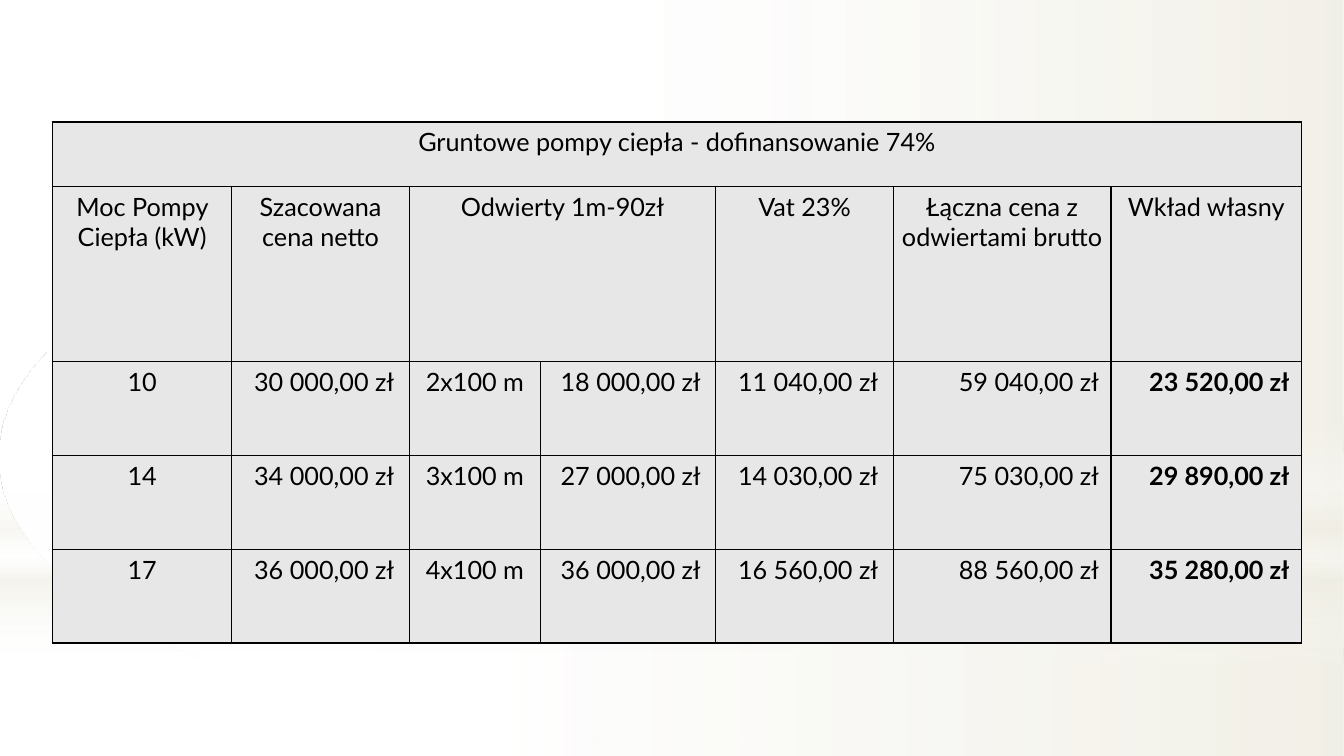
"""Build the slide with the ground heat pump price table."""
from lxml.etree import SubElement
from pptx import Presentation
from pptx.dml.color import RGBColor
from pptx.enum.shapes import MSO_SHAPE
from pptx.enum.text import PP_ALIGN
from pptx.oxml.ns import qn
from pptx.util import Inches, Pt

FONT = "Lato"
BLACK, WHITE, CREAM, GREY = "000000", "FFFFFF", "EEECE1", "E7E7E7"
COLUMN_WIDTHS = [1.78, 1.76, 1.3, 1.74, 1.76, 2.16, 1.89]
ROW_HEIGHTS = [0.64, 1.74, 0.93, 0.93, 0.93]
RIGHT_MARGINS = {1: 0.15, 3: 0.15, 4: 0.15, 5: 0.12, 6: 0.12}
TITLE = "Gruntowe pompy ciepła - dofinansowanie 74%"
ROWS = [
    [TITLE, "", "", "", "", "", ""],
    ["Moc Pompy Ciepła (kW)", "Szacowana cena netto", "Odwierty 1m-90zł", "",
     "Vat 23%", "Łączna cena z odwiertami brutto", "Wkład własny"],
    ["10", "30 000,00 zł", "2x100 m", "18 000,00 zł", "11 040,00 zł", "59 040,00 zł", "23 520,00 zł"],
    ["14", "34 000,00 zł", "3x100 m", "27 000,00 zł", "14 030,00 zł", "75 030,00 zł", "29 890,00 zł"],
    ["17", "36 000,00 zł", "4x100 m", "36 000,00 zł", "16 560,00 zł", "88 560,00 zł", "35 280,00 zł"],
]
FIRST_DATA_ROW = 2
MERGES = [(0, 0, 6), (1, 2, 3)]


def color(hex_text):
    return RGBColor.from_string(hex_text)


class SlideBuilder:
    def __init__(self, slide):
        self.slide = slide

    def add_gradient(self, kind, left, top, width, height, stops, angle=0):
        shape = self.slide.shapes.add_shape(
            kind, Inches(left), Inches(top), Inches(width), Inches(height))
        shape.shadow.inherit = False
        shape.line.fill.background()
        shape.fill.gradient()
        shape.fill.gradient_angle = -angle % 360
        stop_list = shape._element.spPr.find(".//" + qn("a:gsLst"))
        for default_stop in list(stop_list):
            stop_list.remove(default_stop)
        for position, hex_text, opacity in stops:
            stop = SubElement(stop_list, qn("a:gs"), pos=str(position * 1000))
            tint = SubElement(stop, qn("a:srgbClr"), val=hex_text)
            SubElement(tint, qn("a:alpha"), val=str(opacity * 1000))

    def add_borders(self, cell):
        properties = cell._tc.get_or_add_tcPr()
        for side in ("lnL", "lnR", "lnT", "lnB"):
            line = SubElement(properties, qn(f"a:{side}"), w=str(Pt(0.96)))
            fill = SubElement(line, qn("a:solidFill"))
            SubElement(fill, qn("a:srgbClr"), val=BLACK)

    def format_cell(self, cell, text, alignment, right_margin, bold):
        self.add_borders(cell)
        cell.fill.solid()
        cell.fill.fore_color.rgb = color(GREY)
        cell.margin_left = Inches(0.01)
        cell.margin_right = Inches(right_margin)
        cell.margin_top = cell.margin_bottom = Inches(0.05)
        cell.text_frame.text = text
        paragraph = cell.text_frame.paragraphs[0]
        paragraph.alignment = alignment
        for run in paragraph.runs:
            run.font.name = FONT
            run.font.size = Pt(18)
            run.font.bold = bold
            run.font.color.rgb = color(BLACK)

    def add_price_table(self, left, top):
        table = self.slide.shapes.add_table(
            len(ROWS), len(COLUMN_WIDTHS), Inches(left), Inches(top),
            Inches(sum(COLUMN_WIDTHS)), Inches(sum(ROW_HEIGHTS))).table
        for column, width in zip(table.columns, COLUMN_WIDTHS):
            column.width = Inches(width)
        for row, height in zip(table.rows, ROW_HEIGHTS):
            row.height = Inches(height)
        for row_index, texts in enumerate(ROWS):
            is_data = row_index >= FIRST_DATA_ROW
            for column_index, text in enumerate(texts):
                is_amount = is_data and column_index in RIGHT_MARGINS
                self.format_cell(
                    table.cell(row_index, column_index), text,
                    PP_ALIGN.RIGHT if is_amount else PP_ALIGN.CENTER,
                    RIGHT_MARGINS[column_index] if is_amount else 0.01,
                    is_data and column_index == len(texts) - 1)
        for row_index, first, last in MERGES:
            table.cell(row_index, first).merge(table.cell(row_index, last))


def main():
    presentation = Presentation()
    presentation.slide_width = Inches(13.33)
    presentation.slide_height = Inches(7.5)
    builder = SlideBuilder(presentation.slides.add_slide(presentation.slide_layouts[6]))
    builder.add_gradient(MSO_SHAPE.RECTANGLE, 0, 5.58, 13.33, 1.92,
                         [(0, WHITE, 91), (37, WHITE, 76), (100, CREAM, 79)])
    builder.add_gradient(MSO_SHAPE.RECTANGLE, 0, 0, 13.33, 5.58,
                         [(0, WHITE, 89), (48, WHITE, 62), (100, CREAM, 79)])
    builder.add_gradient(MSO_SHAPE.RECTANGLE, 0, 4.12, 13.33, 2.5,
                         [(0, WHITE, 0), (29, WHITE, 30), (45, CREAM, 40),
                          (55, WHITE, 26), (65, CREAM, 60), (100, WHITE, 0)], 90)
    builder.add_gradient(MSO_SHAPE.OVAL, 0, 1.75, 13.33, 5.58,
                         [(0, WHITE, 100), (56, WHITE, 0)])
    builder.add_price_table(0.52, 1.21)
    presentation.save("out.pptx")


if __name__ == "__main__":
    main()
